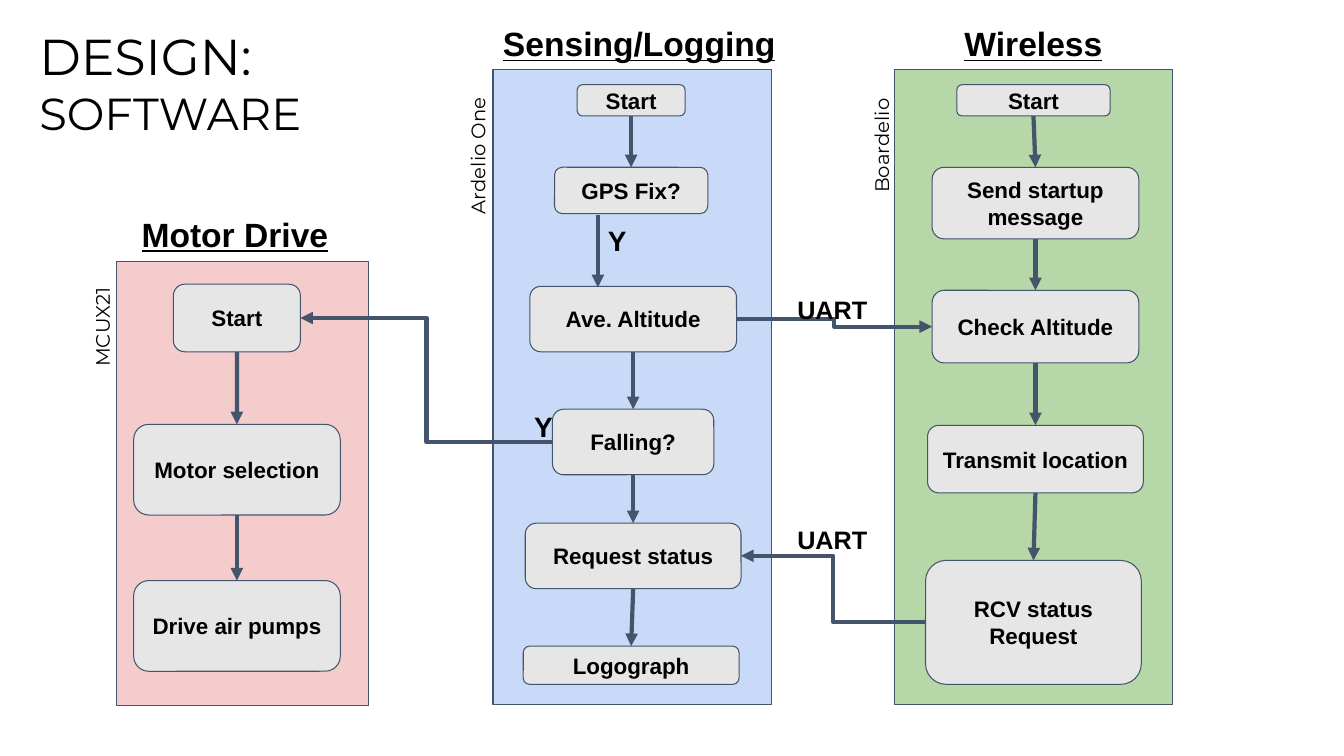
from pptx import Presentation
from pptx.dml.color import RGBColor
from pptx.enum import shapes, text
from pptx.oxml.ns import qn
from pptx.util import Inches, Pt
from lxml import etree

SLATE, GREY, BLACK = "44546A", "E7E6E6", "000000"
LEFT, CENTER = text.PP_ALIGN.LEFT, text.PP_ALIGN.CENTER
TOP_SITE, LEFT_SITE, BOTTOM_SITE, RIGHT_SITE = range(4)

# Each column: panel area, colour, and steps as (text, centre x, top, width, height)
MOTOR = ((1.16, 2.59, 2.5, 4.41), "F4CCCC", [
    ("Start", 2.35, 2.82, 1.26, 0.67),
    ("Motor selection", 2.35, 4.21, 2.05, 0.9),
    ("Drive air pumps", 2.35, 5.76, 2.05, 0.9),
])
SENSING = ((4.89, 0.69, 2.76, 6.3), "C9DAF8", [
    ("Start", 6.26, 0.84, 1.07, 0.31),
    ("GPS Fix?", 6.26, 1.66, 1.52, 0.46),
    ("Ave. Altitude", 6.28, 2.84, 2.05, 0.65),
    ("Falling?", 6.28, 4.06, 1.6, 0.65),
    ("Request status", 6.28, 5.19, 2.14, 0.65),
    ("Logograph", 6.26, 6.41, 2.14, 0.38),
])
WIRELESS = ((8.87, 0.69, 2.76, 6.3), "B6D7A8", [
    ("Start", 10.25, 0.84, 1.52, 0.31),
    ("Send startup\nmessage", 10.27, 1.66, 2.05, 0.71),
    ("Check Altitude", 10.27, 2.88, 2.05, 0.72),
    ("Transmit location", 10.27, 4.22, 2.14, 0.67),
    ("RCV status\nRequest", 10.25, 5.56, 2.14, 1.23),
])


def rgb(value):
    return RGBColor.from_string(value)


def write(tf, lines, font, align, inset=0.1, **style):
    """Fill a text frame with one paragraph per (text, size) pair."""
    tf.word_wrap = True
    tf.auto_size = text.MSO_AUTO_SIZE.NONE
    tf.margin_left = tf.margin_right = Inches(0.1)
    tf.margin_top = tf.margin_bottom = Inches(inset)
    for i, (line, size) in enumerate(lines):
        p = tf.add_paragraph() if i else tf.paragraphs[0]
        p.alignment = align
        p.space_before = Pt(0)
        r = p.add_run()
        r.text = line
        r.font.name, r.font.size = font, Pt(size)
        r.font.color.rgb = rgb(BLACK)
        r.font.bold = style.get("bold", False)
        r.font.underline = style.get("underline", False)


def add_title(slide):
    sp = slide.shapes.title
    sp.left, sp.top, sp.width, sp.height = map(Inches, (0.29, 0.2, 3.62, 1.45))
    write(sp.text_frame, [("DESIGN:", 36), ("SOFTWARE", 32)],
          "Montserrat", LEFT, 0.05)
    sp.text_frame.vertical_anchor = text.MSO_ANCHOR.TOP


def add_block(slide, kind, area, fill):
    sp = slide.shapes.add_shape(kind, *map(Inches, area))
    sp.shadow.inherit = False
    sp.fill.solid()
    sp.fill.fore_color.rgb = rgb(fill)
    sp.line.color.rgb = rgb(SLATE)
    sp.line.width = Pt(0.75)
    return sp


def add_step(slide, label, centre, top, width, height):
    sp = add_block(slide, shapes.MSO_SHAPE.ROUNDED_RECTANGLE,
                   (centre - width / 2, top, width, height), GREY)
    write(sp.text_frame, [(line, 16) for line in label.split("\n")],
          "Arial", CENTER, bold=True)
    sp.text_frame.vertical_anchor = text.MSO_ANCHOR.MIDDLE
    return sp


def add_column(slide, area, fill, steps):
    add_block(slide, shapes.MSO_SHAPE.RECTANGLE, area, fill)
    return [add_step(slide, *step) for step in steps]


def add_arrow(slide, kind, ends=(0, 0, 0, 0)):
    line = slide.shapes.add_connector(kind, *map(Inches, ends))
    line.line.color.rgb = rgb(SLATE)
    line.line.width = Pt(3)
    etree.SubElement(line.line._get_or_add_ln(), qn("a:tailEnd"), type="triangle")
    etree.SubElement(line._element.spPr, qn("a:effectLst"))
    return line


def link(slide, kind, source, source_site, target, target_site):
    line = add_arrow(slide, kind)
    line.begin_connect(source, source_site)
    line.end_connect(target, target_site)


def add_label(slide, label, area, size, align=LEFT, underline=False):
    sp = slide.shapes.add_textbox(*map(Inches, area))
    write(sp.text_frame, [(label, size)], "Arial", align,
          bold=True, underline=underline)


def add_side_label(slide, label, area):
    sp = slide.shapes.add_textbox(*map(Inches, area))
    sp.rotation = 270
    write(sp.text_frame, [(label, 14)], "Montserrat", CENTER, 0.05)


def main():
    prs = Presentation()
    prs.slide_width, prs.slide_height = Inches(13.33), Inches(7.5)
    slide = prs.slides.add_slide(prs.slide_layouts[5])
    add_title(slide)

    # Panels with their steps
    columns = [add_column(slide, *c) for c in (MOTOR, SENSING, WIRELESS)]
    motor, sensing, wireless = columns
    gps, altitude, falling, request = sensing[1:5]

    # Arrows down each column; the GPS branch leaves off-centre
    straight = shapes.MSO_CONNECTOR.STRAIGHT
    for steps in columns:
        for upper, lower in zip(steps, steps[1:]):
            if upper is gps:
                add_arrow(slide, straight, (5.93, 2.13, 5.93, 2.85))
            else:
                link(slide, straight, upper, BOTTOM_SITE, lower, TOP_SITE)

    # Arrows between columns
    elbow = shapes.MSO_CONNECTOR.ELBOW
    link(slide, elbow, falling, LEFT_SITE, motor[0], RIGHT_SITE)
    link(slide, elbow, altitude, RIGHT_SITE, wireless[2], LEFT_SITE)
    link(slide, elbow, wireless[4], LEFT_SITE, request, RIGHT_SITE)

    # Labels on arrows
    for left, top in ((5.93, 2.12), (5.2, 3.96)):
        add_label(slide, "Y", (left, top, 0.26, 0.46), 20)
    for top in (2.82, 5.1):
        add_label(slide, "UART", (7.81, top, 0.9, 0.38), 18)

    # Column headings and board names
    add_label(slide, "Motor Drive", (0.36, 2.02, 3.94, 0.57), 24, CENTER, True)
    add_label(slide, "Sensing/Logging", (4.89, 0.13, 2.92, 0.81), 24, LEFT, True)
    add_label(slide, "Wireless", (8.87, 0.13, 2.76, 0.52), 24, CENTER, True)
    add_side_label(slide, "MCUX21", (0.35, 3.09, 1.3, 0.31))
    add_side_label(slide, "Ardelio One", (3.86, 1.4, 1.71, 0.29))
    add_side_label(slide, "Boardelio", (7.94, 1.32, 1.52, 0.25))

    prs.save("out.pptx")


if __name__ == "__main__":
    main()
